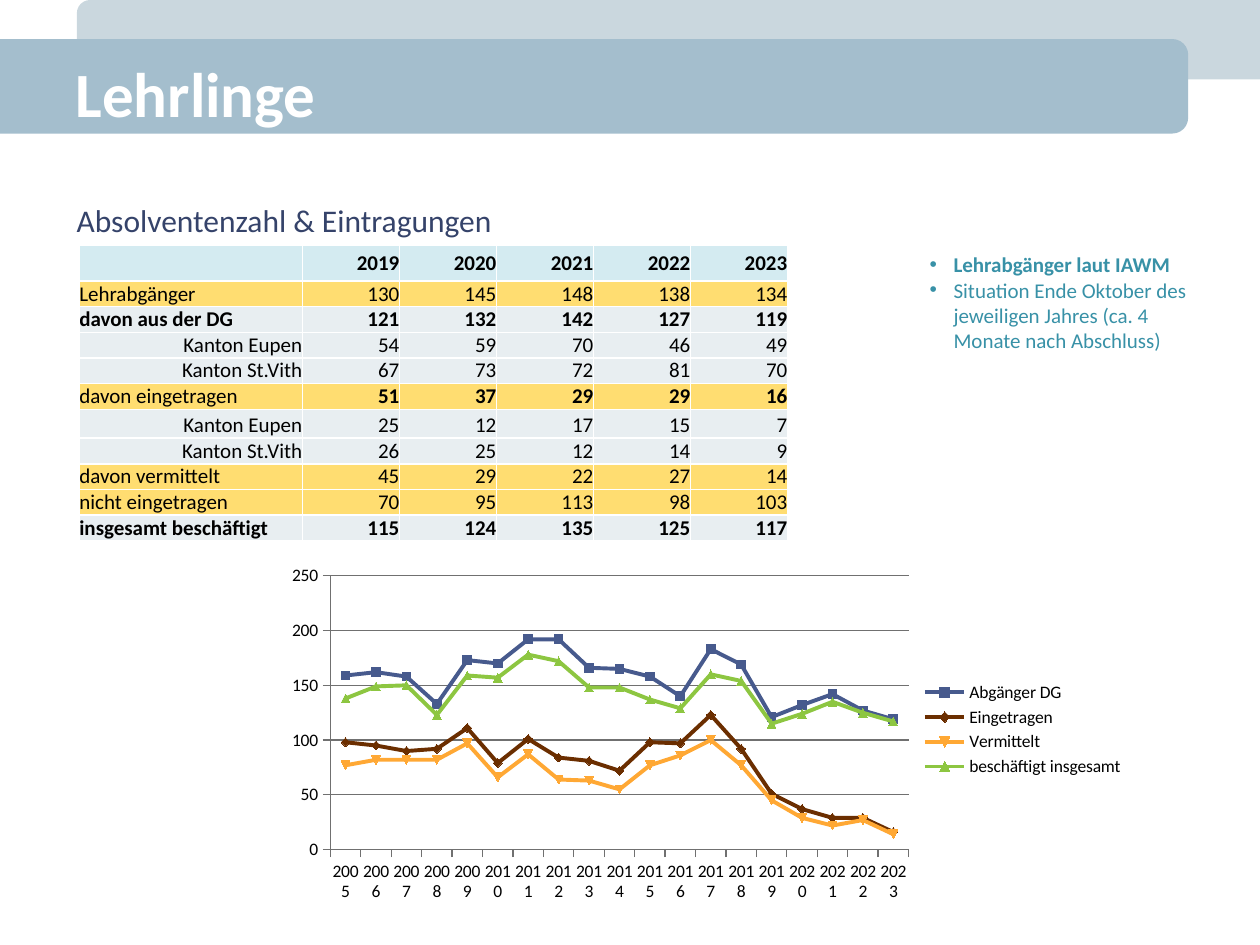
from lxml.etree import SubElement
from pptx import Presentation
from pptx.chart.data import CategoryChartData
from pptx.dml.color import RGBColor
from pptx.enum.chart import XL_CHART_TYPE, XL_LEGEND_POSITION, XL_MARKER_STYLE, XL_TICK_MARK
from pptx.enum.shapes import MSO_SHAPE
from pptx.enum.text import MSO_ANCHOR, PP_ALIGN
from pptx.oxml import parse_xml
from pptx.oxml.ns import nsdecls, qn
from pptx.util import Inches, Pt

FONT = "Calibri"
COLORS = {
    "back_band": "8BA8B8", "title_band": "A4BECD", "white": "FFFFFF", "black": "000000",
    "heading": "35436A", "note": "3891A7", "axis": "707070",
    "header": "D4EBF1", "accent": "FFDD71", "plain": "E8EEF1",
}
TITLE = "Lehrlinge"
HEADING = "Absolventenzahl & Eintragungen"
NOTES = [
    ("Lehrabgänger laut IAWM", True),
    ("Situation Ende Oktober des jeweiligen Jahres (ca. 4 Monate nach Abschluss)", False),
]
TABLE_YEARS = ["2019", "2020", "2021", "2022", "2023"]
# label, values, fill, bold label, bold values
TABLE_ROWS = [
    ("", TABLE_YEARS, "header", True, True),
    ("Lehrabgänger", [130, 145, 148, 138, 134], "accent", False, False),
    ("davon aus der DG", [121, 132, 142, 127, 119], "plain", True, True),
    ("Kanton Eupen", [54, 59, 70, 46, 49], "plain", False, False),
    ("Kanton St.Vith", [67, 73, 72, 81, 70], "plain", False, False),
    ("davon eingetragen", [51, 37, 29, 29, 16], "accent", False, True),
    ("Kanton Eupen", [25, 12, 17, 15, 7], "plain", False, False),
    ("Kanton St.Vith", [26, 25, 12, 14, 9], "plain", False, False),
    ("davon vermittelt", [45, 29, 22, 27, 14], "accent", False, False),
    ("nicht eingetragen", [70, 95, 113, 98, 103], "accent", False, False),
    ("insgesamt beschäftigt", [115, 124, 135, 125, 117], "plain", True, True),
]
COLUMN_WIDTHS = [1.77] + [0.77] * len(TABLE_YEARS)
ROW_HEIGHTS = [0.26] + [0.2] * 5 + [0.23] + [0.2] * 4
CHART_YEARS = [str(year) for year in range(2005, 2024)]
SERIES = [
    ("Abgänger DG", "475A8D", [159, 162, 158, 133, 173, 170, 192, 192, 166, 165,
                               158, 140, 183, 169, 121, 132, 142, 127, 119]),
    ("Eingetragen", "6B2E00", [98, 95, 90, 92, 111, 79, 101, 84, 81, 72,
                               98, 97, 123, 92, 51, 37, 29, 29, 16]),
    ("Vermittelt", "FFA834", [77, 82, 82, 82, 97, 66, 87, 64, 63, 55,
                              77, 86, 100, 77, 45, 29, 22, 27, 14]),
    ("beschäftigt insgesamt", "8DC641", [138, 149, 150, 123, 159, 157, 178, 172, 148, 148,
                                         137, 129, 160, 154, 115, 124, 135, 125, 117]),
]
PLOT_SHARES = {"x": 0.066, "y": 0.104, "w": 0.67, "h": 0.706}


def rgb(color):
    return RGBColor.from_string(COLORS.get(color, color))


def box(*lengths):
    return [Inches(length) for length in lengths]


def write(paragraph, text, size=12, color="black", bold=False, align=PP_ALIGN.LEFT, bullet=None):
    paragraph.alignment = align
    if bullet:
        properties = paragraph._p.get_or_add_pPr()
        properties.set("marL", str(Inches(0.19)))
        properties.set("indent", str(-Inches(0.19)))
        SubElement(properties, qn("a:buFont"), typeface="Arial")
        SubElement(properties, qn("a:buChar"), char=bullet)
    run = paragraph.add_run()
    run.text = text
    run.font.name = FONT
    run.font.size = Pt(size)
    run.font.bold = bold
    run.font.color.rgb = rgb(color)


def add_band(slide, place, rotation, color, alpha=None):
    band = slide.shapes.add_shape(MSO_SHAPE.ROUND_2_SAME_RECTANGLE, *box(*place))
    band.rotation = rotation
    band.shadow.inherit = False
    band.fill.solid()
    band.fill.fore_color.rgb = rgb(color)
    band.line.fill.background()
    if alpha:
        fill_color = band._element.spPr.find(qn("a:solidFill"))[0]
        SubElement(fill_color, qn("a:alpha"), val=str(alpha * 1000))


def add_text_box(slide, place):
    frame = slide.shapes.add_textbox(*box(*place)).text_frame
    frame.word_wrap = True
    return frame


def fill_cell(cell, text, fill, anchor, bold, align):
    cell.margin_left = cell.margin_right = cell.margin_top = cell.margin_bottom = 0
    cell.vertical_anchor = anchor
    write(cell.text_frame.paragraphs[0], text, bold=bold, align=align)
    properties = cell._tc.get_or_add_tcPr()
    for side in ("lnL", "lnR", "lnT", "lnB"):
        border = SubElement(properties, qn(f"a:{side}"), w=str(Pt(1)))
        border_fill = SubElement(border, qn("a:solidFill"))
        SubElement(border_fill, qn("a:srgbClr"), val=COLORS["white"])
    cell.fill.solid()
    cell.fill.fore_color.rgb = rgb(fill)


def add_apprentice_table(slide):
    place = box(0.63, 1.95, sum(COLUMN_WIDTHS), sum(ROW_HEIGHTS))
    table = slide.shapes.add_table(len(TABLE_ROWS), len(COLUMN_WIDTHS), *place).table
    for column, width in zip(table.columns, COLUMN_WIDTHS):
        column.width = Inches(width)
    for row, height in zip(table.rows, ROW_HEIGHTS):
        row.height = Inches(height)
    for r, (label, values, fill, bold_label, bold_values) in enumerate(TABLE_ROWS):
        anchor = MSO_ANCHOR.MIDDLE if fill == "header" else MSO_ANCHOR.BOTTOM
        label_align = PP_ALIGN.RIGHT if label.startswith("Kanton") else PP_ALIGN.LEFT
        fill_cell(table.cell(r, 0), label, fill, anchor, bold_label, label_align)
        for c, value in enumerate(values, 1):
            fill_cell(table.cell(r, c), str(value), fill, anchor, bold_values, PP_ALIGN.RIGHT)


def set_plot_area(chart):
    plot_area = chart._chartSpace.chart.plotArea
    for layout in plot_area.findall(qn("c:layout")):
        plot_area.remove(layout)
    shares = "".join(f'<c:{key} val="{share}"/>' for key, share in PLOT_SHARES.items())
    plot_area.insert(0, parse_xml(
        f'<c:layout {nsdecls("c")}><c:manualLayout><c:layoutTarget val="inner"/>'
        f'<c:xMode val="edge"/><c:yMode val="edge"/>{shares}</c:manualLayout></c:layout>'))


def add_trend_chart(slide):
    data = CategoryChartData()
    data.categories = CHART_YEARS
    for name, _, values in SERIES:
        data.add_series(name, values)
    chart = slide.shapes.add_chart(
        XL_CHART_TYPE.LINE_MARKERS, *box(2.17, 4.25, 6.85, 3.08), data).chart
    chart.has_title = False
    chart.font.name = FONT
    chart.font.size = Pt(10)
    chart.font.color.rgb = rgb("black")
    chart.has_legend = True
    chart.legend.position = XL_LEGEND_POSITION.RIGHT
    chart.legend.include_in_layout = False
    chart.plots[0].vary_by_categories = False
    for series, (_, color, _) in zip(chart.plots[0].series, SERIES):
        series.smooth = False
        series.format.line.width = Pt(2.25)
        series.format.line.color.rgb = rgb(color)
        series.marker.style = XL_MARKER_STYLE.AUTOMATIC
        series.marker.size = 5
        series.marker.format.fill.solid()
        series.marker.format.fill.fore_color.rgb = rgb(color)
        series.marker.format.line.color.rgb = rgb(color)
    years, counts = chart.category_axis, chart.value_axis
    counts.minimum_scale, counts.maximum_scale, counts.major_unit = 0, 250, 50
    counts.has_major_gridlines = True
    for axis in (years, counts):
        axis.major_tick_mark = XL_TICK_MARK.OUTSIDE
        axis.minor_tick_mark = XL_TICK_MARK.NONE
        axis.tick_labels.font.size = Pt(10)
    for part in (years, counts, counts.major_gridlines):
        part.format.line.color.rgb = rgb("axis")
        part.format.line.width = Pt(0.75)
    years._element.find(qn("c:txPr")).find(qn("a:bodyPr")).set("rot", "0")
    set_plot_area(chart)


def main():
    deck = Presentation()
    deck.slide_width, deck.slide_height = box(10, 7.5)
    slide = deck.slides.add_slide(deck.slide_layouts[5])
    add_band(slide, (5, -4.39, 0.63, 9.41), 270, "back_band", alpha=45)
    add_band(slide, (4.34, -4.03, 0.75, 9.43), 90, "title_band")

    title = slide.shapes.title
    slide.shapes._spTree.append(title._element)
    title.left, title.top, title.width, title.height = box(0.5, 0.3, 9, 0.87)
    title.text_frame.vertical_anchor = MSO_ANCHOR.MIDDLE
    write(title.text_frame.paragraphs[0], TITLE, size=36, color="white", bold=True)

    add_apprentice_table(slide)
    heading = add_text_box(slide, (0.51, 1.55, 6.69, 0.4))
    write(heading.paragraphs[0], HEADING, size=18, color="heading")
    notes = add_text_box(slide, (7.28, 1.95, 2.36, 1.11))
    for i, (note, bold) in enumerate(NOTES):
        paragraph = notes.add_paragraph() if i else notes.paragraphs[0]
        write(paragraph, note, color="note", bold=bold, bullet="•")
    add_trend_chart(slide)
    deck.save("out.pptx")


if __name__ == "__main__":
    main()
